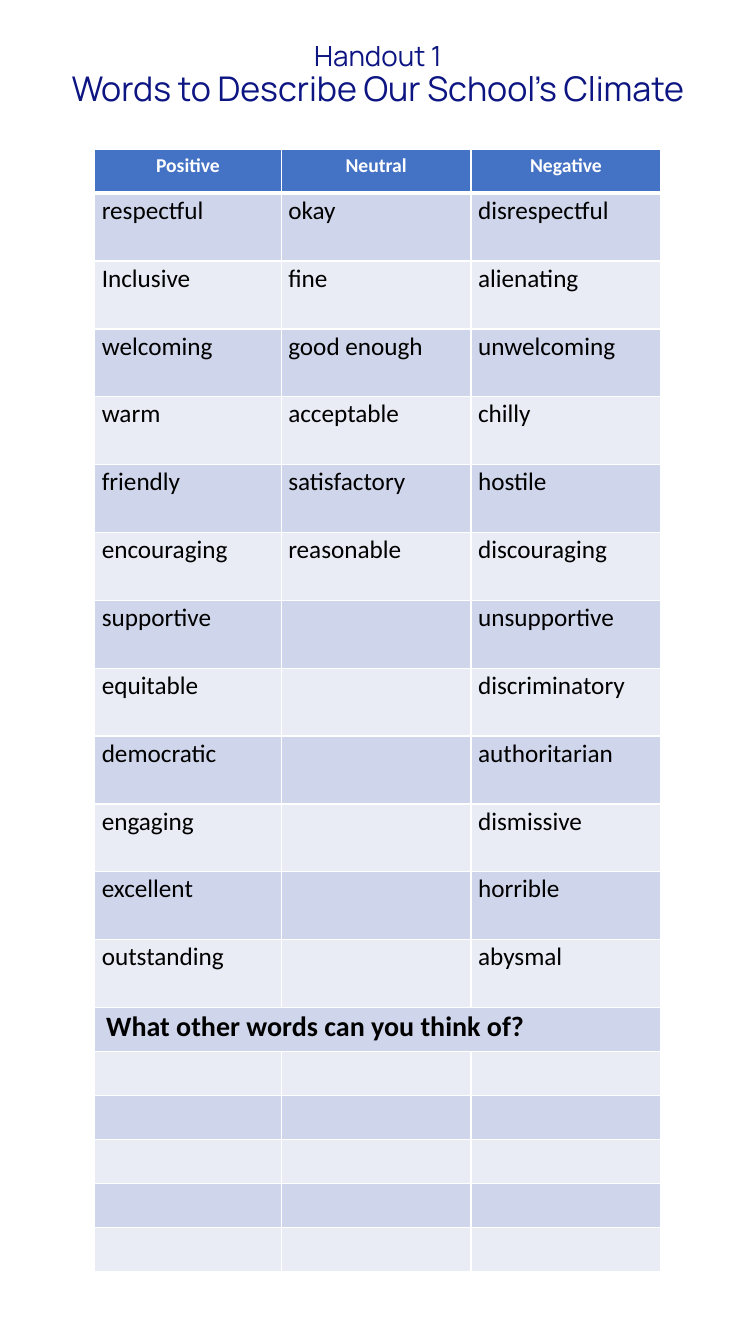
from dataclasses import dataclass
from itertools import zip_longest

from lxml.etree import SubElement
from pptx import Presentation
from pptx.dml.color import RGBColor as RGB
from pptx.enum.text import MSO_ANCHOR as ANCHOR, PP_ALIGN as ALIGN
from pptx.oxml.ns import qn
from pptx.util import Emu, Pt

POSITIVE = ["respectful", "Inclusive", "welcoming", "warm", "friendly", "encouraging",
            "supportive", "equitable", "democratic", "engaging", "excellent", "outstanding"]
NEUTRAL = ["okay", "fine", "good enough", "acceptable", "satisfactory", "reasonable"]
NEGATIVE = ["disrespectful", "alienating", "unwelcoming", "chilly", "hostile", "discouraging",
            "unsupportive", "discriminatory", "authoritarian", "dismissive", "horrible", "abysmal"]
HEADERS = ["Positive", "Neutral", "Negative"]
QUESTION = "What other words can you think of?"
BLANK_ROWS = 5
COLUMN_WIDTHS = [555, 565, 565]
WORD_HEIGHT, SHORT_HEIGHT = 202, 131


@dataclass(frozen=True)
class Theme:
    """Colours, fonts and type sizes of the handout."""
    navy: str = "0D1582"
    blue: str = "4472C4"
    bands: tuple = ("E9EBF5", "CFD5EA")
    white: str = "FFFFFF"
    black: str = "000000"
    title_font: str = "Manrope"
    body_font: str = "Calibri"
    kicker: float = 19.8
    title: float = 24.3
    header: int = 14
    word: int = 18
    question: int = 20


THEME = Theme()


def px(n):
    """Convert pixels, 300 to the inch, into EMU."""
    return Emu(n * 3048)


def style(p, font, size, color, bold=False, align=ALIGN.LEFT, spacing=1.0):
    """Format a paragraph and all its runs."""
    p.alignment = align
    p.line_spacing = spacing
    for r in p.runs:
        r.font.name = font
        r.font.size = Pt(size)
        r.font.bold = bold
        r.font.color.rgb = RGB.from_string(color)


def add_title(s, lines, x, y, w, h):
    """Add centred title lines, given as text and size pairs."""
    tf = s.shapes.add_textbox(px(x), px(y), px(w), px(h)).text_frame
    tf.word_wrap = True
    tf.vertical_anchor = ANCHOR.TOP
    tf.margin_left = tf.margin_right = tf.margin_top = tf.margin_bottom = 0
    tf.text = "\n".join(text for text, _ in lines)
    for p, (_, size) in zip(tf.paragraphs, lines):
        style(p, THEME.title_font, size, THEME.navy, align=ALIGN.CENTER, spacing=0.9)


def set_borders(cell, top, bottom):
    """Draw white cell borders with the given top and bottom widths."""
    tc_pr = cell._tc.get_or_add_tcPr()
    for side, width in (("L", 1), ("R", 1), ("T", top), ("B", bottom)):
        ln = SubElement(tc_pr, qn(f"a:ln{side}"), w=str(Pt(width)))
        fill = SubElement(ln, qn("a:solidFill"))
        SubElement(fill, qn("a:srgbClr"), val=THEME.white)


def paint_cell(cell, row):
    """Give a cell the borders and fill of its row."""
    set_borders(cell, 3 if row == 1 else 1, 3 if row == 0 else 1)
    cell.fill.solid()
    cell.fill.fore_color.rgb = RGB.from_string(THEME.bands[row % 2] if row else THEME.blue)


def write_cell(cell, text, size, color=THEME.black, **look):
    """Write and format the text of a cell."""
    cell.text = text
    style(cell.text_frame.paragraphs[0], THEME.body_font, size, color, **look)


def write_body_cell(cell, text, size, left=21, bold=False):
    """Write a body cell with tight margins."""
    cell.margin_left, cell.margin_right = px(left), px(21)
    cell.margin_top = cell.margin_bottom = 0
    write_cell(cell, text, size, bold=bold, spacing=1.07)


def add_word_table(s, x, y):
    """Add the table of words, the question row and the blank rows."""
    words = list(zip_longest(POSITIVE, NEUTRAL, NEGATIVE, fillvalue=""))
    question_row = len(words) + 1
    heights = [SHORT_HEIGHT] + [WORD_HEIGHT] * len(words) + [SHORT_HEIGHT] * (1 + BLANK_ROWS)
    table = s.shapes.add_table(len(heights), len(COLUMN_WIDTHS), px(x), px(y),
                               px(sum(COLUMN_WIDTHS)), px(sum(heights))).table
    for column, width in zip(table.columns, COLUMN_WIDTHS):
        column.width = px(width)
    for i, height in enumerate(heights):
        table.rows[i].height = px(height)
        for cell in table.rows[i].cells:
            paint_cell(cell, i)
    for cell, text in zip(table.rows[0].cells, HEADERS):
        write_cell(cell, text, THEME.header, THEME.white, bold=True, align=ALIGN.CENTER)
    for i, row in enumerate(words, 1):
        for cell, text in zip(table.rows[i].cells, row):
            if text:
                write_body_cell(cell, text, THEME.word)
    question = table.cell(question_row, 0)
    question.merge(table.cell(question_row, len(COLUMN_WIDTHS) - 1))
    write_body_cell(question, QUESTION, THEME.question, left=34, bold=True)


def main():
    """Build the handout and save it."""
    prs = Presentation()
    prs.slide_width, prs.slide_height = px(2250), px(4000)
    s = prs.slides.add_slide(prs.slide_layouts[6])
    add_title(s, [("Handout 1", THEME.kicker),
                  ("Words to Describe Our School’s Climate", THEME.title)], 0, 126, 2250, 228)
    add_word_table(s, 282, 444)
    prs.save("out.pptx")


if __name__ == "__main__":
    main()
